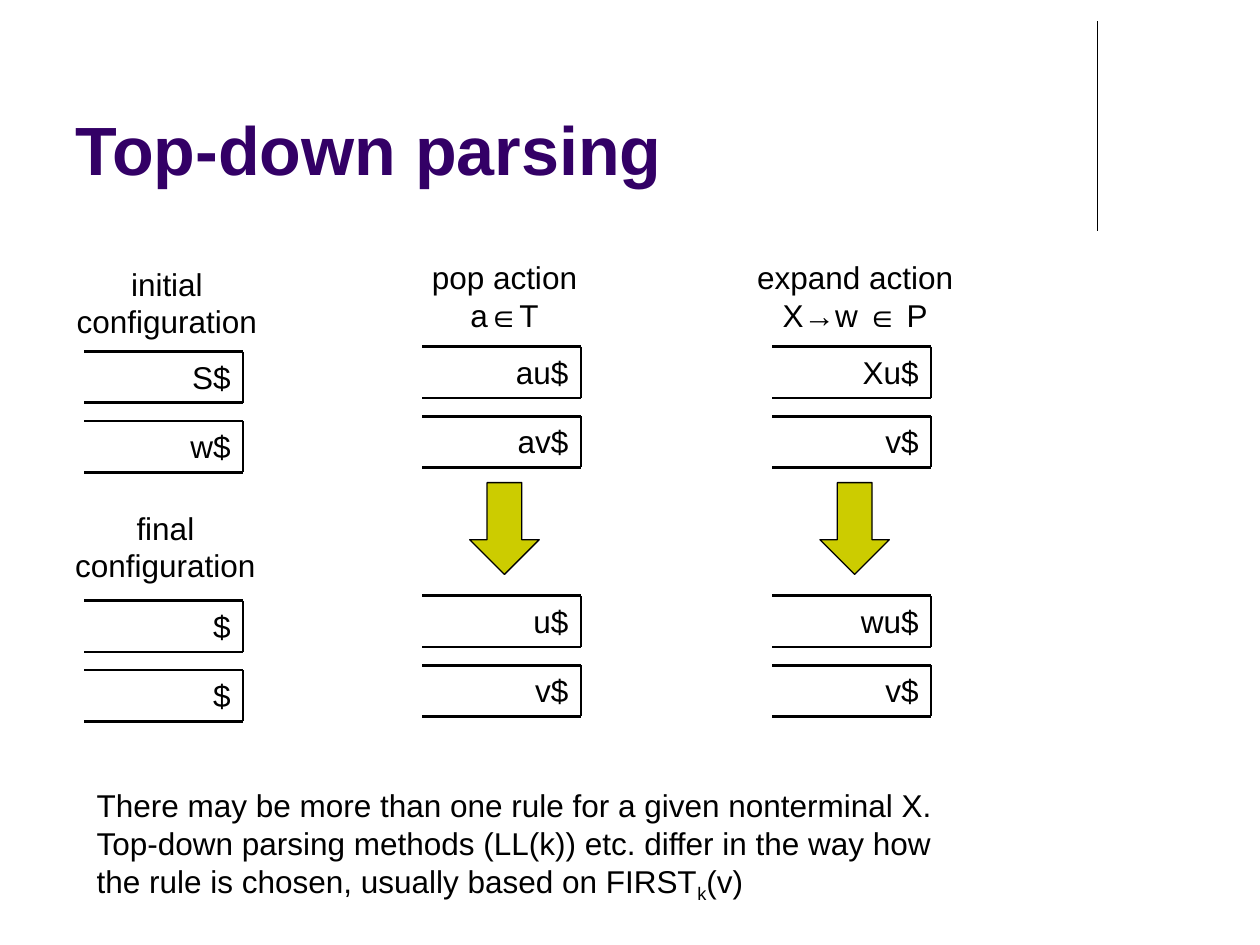
from lxml.etree import SubElement
from pptx import Presentation
from pptx.dml.color import RGBColor
from pptx.enum.shapes import MSO_CONNECTOR, MSO_SHAPE
from pptx.enum.text import MSO_ANCHOR, MSO_AUTO_SIZE, PP_ALIGN
from pptx.oxml.ns import qn
from pptx.util import Cm, Pt

BLACK = RGBColor(0x00, 0x00, 0x00)
PURPLE = RGBColor(0x33, 0x00, 0x66)
OLIVE = RGBColor(0xCC, 0xCC, 0x00)
FONT = "Arial"

TAPE_W, TAPE_H = 3.2, 1.03
TAPE_STEP = 1.4     # from stack tape to input tape
PAIR_STEP = 5.02    # from upper pair to lower pair


def add_line(shapes, x1, y1, x2, y2, width=1.5):
    line = shapes.add_connector(MSO_CONNECTOR.STRAIGHT, Cm(x1), Cm(y1), Cm(x2), Cm(y2))
    line.line.color.rgb = BLACK
    line.line.width = Pt(width)
    SubElement(line._element.spPr, qn("a:effectLst"))


def add_text(shapes, x, y, w, h, lines, align, wrap=False):
    """Add a text box with one paragraph, broken into lines; return the paragraph."""
    tf = shapes.add_textbox(Cm(x), Cm(y), Cm(w), Cm(h)).text_frame
    tf.word_wrap = wrap
    p = tf.paragraphs[0]
    p.alignment = align
    p.font.name = FONT
    p.font.size = Pt(18)
    p.font.color.rgb = BLACK
    for i, text in enumerate(lines):
        if i:
            p.add_line_break()
        r = p.add_run()
        r.text = text
        r.font.name = FONT
        r.font.size = Pt(18)
        r.font.color.rgb = BLACK
    return p


prs = Presentation()
prs.slide_width, prs.slide_height = Cm(25.4), Cm(19.05)
s = prs.slides.add_slide(prs.slide_layouts[5])

add_line(s.shapes, 22.12, 0.43, 22.12, 4.65, 0.75)

title = s.shapes.title
title.left, title.top, title.width, title.height = Cm(1.27), Cm(0.33), Cm(20.96), Cm(3.61)
tf = title.text_frame
tf.auto_size = MSO_AUTO_SIZE.NONE
tf.word_wrap = True
tf.vertical_anchor = MSO_ANCHOR.BOTTOM
p = tf.paragraphs[0]
p.alignment = PP_ALIGN.LEFT
r = p.add_run()
r.text = "Top-down parsing"
r.font.name = FONT
r.font.size = Pt(39)
r.font.bold = True
r.font.color.rgb = PURPLE

# left and top of each column, then its pairs of stack and input tape
columns = [
    (1.7, 7.09, [("S$", "w$"), ("$", "$")]),
    (8.51, 6.99, [("au$", "av$"), ("u$", "v$")]),
    (15.57, 6.99, [("Xu$", "v$"), ("wu$", "v$")]),
]
for x, top, pairs in columns:
    for i, pair in enumerate(pairs):
        grp = s.shapes.add_group_shape()
        for j, content in enumerate(pair):
            y = top + i * PAIR_STEP + j * TAPE_STEP
            right, bottom = x + TAPE_W, y + TAPE_H
            add_line(grp.shapes, x, y, right, y)
            add_line(grp.shapes, x, bottom, right, bottom)
            add_line(grp.shapes, right, y, right, bottom)
            add_text(grp.shapes, x, y, TAPE_W, TAPE_H, [content], PP_ALIGN.RIGHT, wrap=True)

headings = [
    (1.27, 5.21, 4.19, ["initial", "configuration"]),
    (1.24, 10.13, 4.19, ["final", "configuration"]),
    (8.43, 5.08, 3.48, ["pop action", "a∈T"]),
    (14.99, 5.08, 4.5, ["expand action", "X→w ∈ P"]),
]
for x, y, w, lines in headings:
    add_text(s.shapes, x, y, w, 1.8, lines, PP_ALIGN.CENTER)

for x, top, pairs in columns[1:]:
    arrow = s.shapes.add_shape(MSO_SHAPE.DOWN_ARROW, Cm(x + 0.96), Cm(9.73), Cm(1.4), Cm(1.85))
    arrow.shadow.inherit = False
    arrow.fill.solid()
    arrow.fill.fore_color.rgb = OLIVE
    arrow.line.color.rgb = BLACK
    arrow.line.width = Pt(0.75)

p = add_text(s.shapes, 1.7, 15.72, 17.5, 2.57, [
    "There may be more than one rule for a given nonterminal X.",
    "Top-down parsing methods (LL(k)) etc. differ in the way how",
    "the rule is chosen, usually based on FIRST",
], PP_ALIGN.LEFT)
for text, baseline in [("k", "-25000"), ("(v)", "0")]:
    r = p.add_run()
    r.text = text
    r.font.name = FONT
    r.font.size = Pt(18)
    r.font.color.rgb = BLACK
    r.font._element.set("baseline", baseline)

prs.save("out.pptx")
